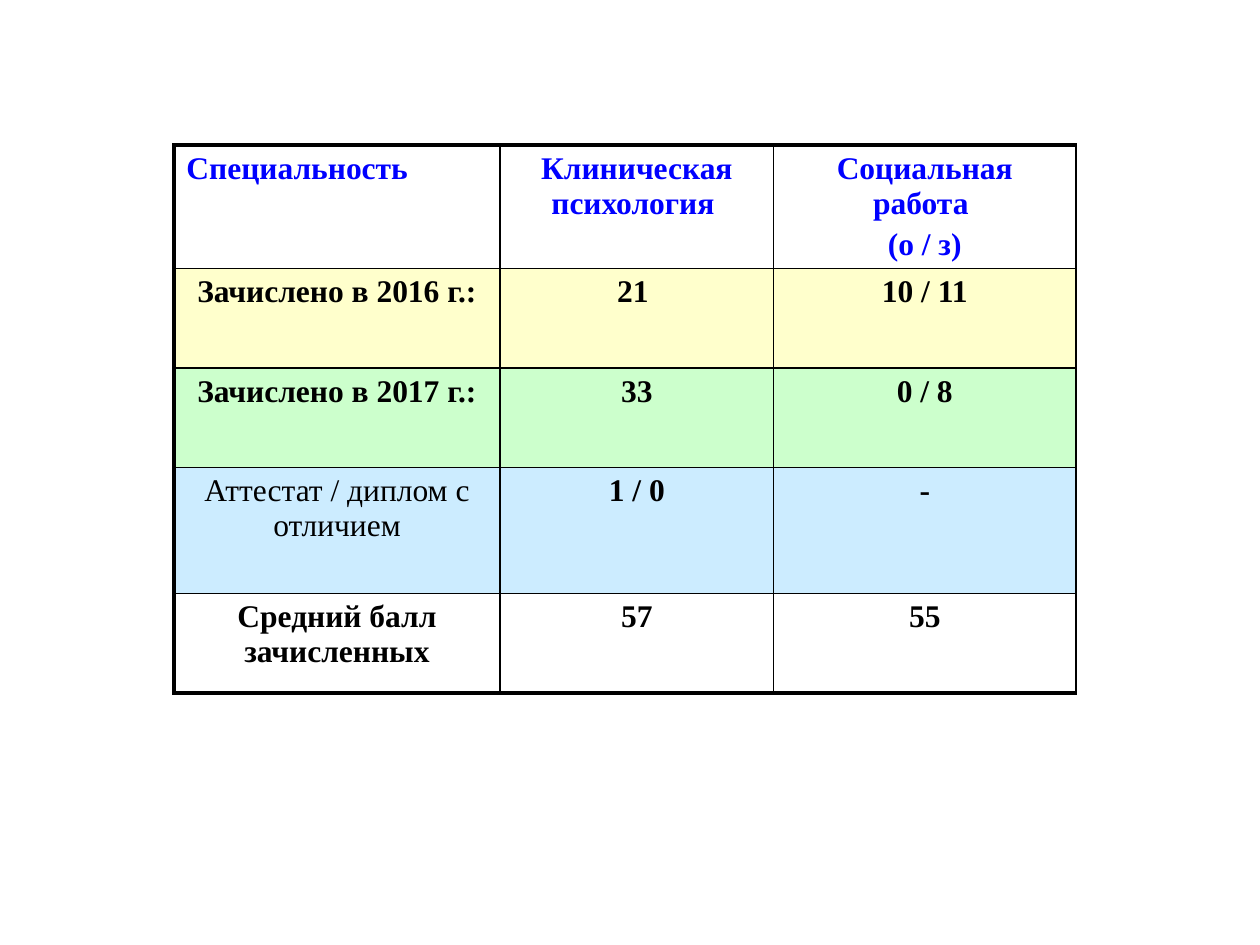
"""Build a slide with a table of students enrolled by speciality."""
import pptx
import pptx.dml.color
import pptx.enum.text
import pptx.oxml
import pptx.oxml.ns
import pptx.util

Inches, Pt = pptx.util.Inches, pptx.util.Pt
RGBColor = pptx.dml.color.RGBColor
ALIGN = pptx.enum.text.PP_ALIGN

BLUE = RGBColor(0x00, 0x00, 0xFF)
BLACK = RGBColor(0x00, 0x00, 0x00)
YELLOW = RGBColor(0xFF, 0xFF, 0xCC)
GREEN = RGBColor(0xCC, 0xFF, 0xCC)
SKY = RGBColor(0xCC, 0xEC, 0xFF)

LEFT, TOP = 1.38, 1.15
COL_WIDTHS = [2.59, 2.17, 2.4]
THIN, THICK = 1, 2.25
ROWS = [
    (0.98, None, ["Специальность", "Клиническая психология ", "Социальная работа \n(о / з)"]),
    (0.79, YELLOW, ["Зачислено в 2016 г.:", "21 ", "10 / 11"]),
    (0.79, GREEN, ["Зачислено в 2017 г.:", "33", "0 / 8"]),
    (1, SKY, ["Аттестат / диплом с отличием", "1 / 0", "-"]),
    (0.79, None, ["Средний балл зачисленных", "57", "55"]),
]
REGULAR_CELL = (3, 0)


def set_borders(cell, widths):
    tcPr = cell._tc.get_or_add_tcPr()
    for side, width in widths.items():
        tcPr.append(pptx.oxml.parse_xml(
            f'<a:ln{side} {pptx.oxml.ns.nsdecls("a")} w="{Pt(width)}">'
            f'<a:solidFill><a:srgbClr val="{BLACK}"/></a:solidFill></a:ln{side}>'))


def fill_cell(cell, row, col, text, color):
    set_borders(cell, {
        "L": THICK if col == 0 else THIN,
        "R": THIN,
        "T": THICK if row == 0 else THIN,
        "B": THICK if row == len(ROWS) - 1 else THIN,
    })
    if color is None:
        cell.fill.background()
    else:
        cell.fill.solid()
        cell.fill.fore_color.rgb = color
    cell.text = text
    for i, p in enumerate(cell.text_frame.paragraphs):
        p.alignment = ALIGN.LEFT if (row, col) == (0, 0) else ALIGN.CENTER
        p.space_before = Pt(3.6 if i else 0)
        p.font.name = "Times New Roman"
        p.font.size = Pt(18)
        p.font.bold = (row, col) != REGULAR_CELL
        p.font.color.rgb = BLUE if row == 0 else BLACK


def main():
    prs = pptx.Presentation()
    prs.slide_width, prs.slide_height = Inches(10), Inches(7.5)
    s = prs.slides.add_slide(prs.slide_layouts[6])
    height = sum(row[0] for row in ROWS)
    table = s.shapes.add_table(
        len(ROWS), len(COL_WIDTHS), Inches(LEFT), Inches(TOP),
        Inches(sum(COL_WIDTHS)), Inches(height)).table
    table.first_row = table.horz_banding = False
    for column, width in zip(table.columns, COL_WIDTHS):
        column.width = Inches(width)
    for row, (row_height, color, texts) in enumerate(ROWS):
        table.rows[row].height = Inches(row_height)
        for col, text in enumerate(texts):
            fill_cell(table.cell(row, col), row, col, text, color)
    prs.save("out.pptx")


if __name__ == "__main__":
    main()
